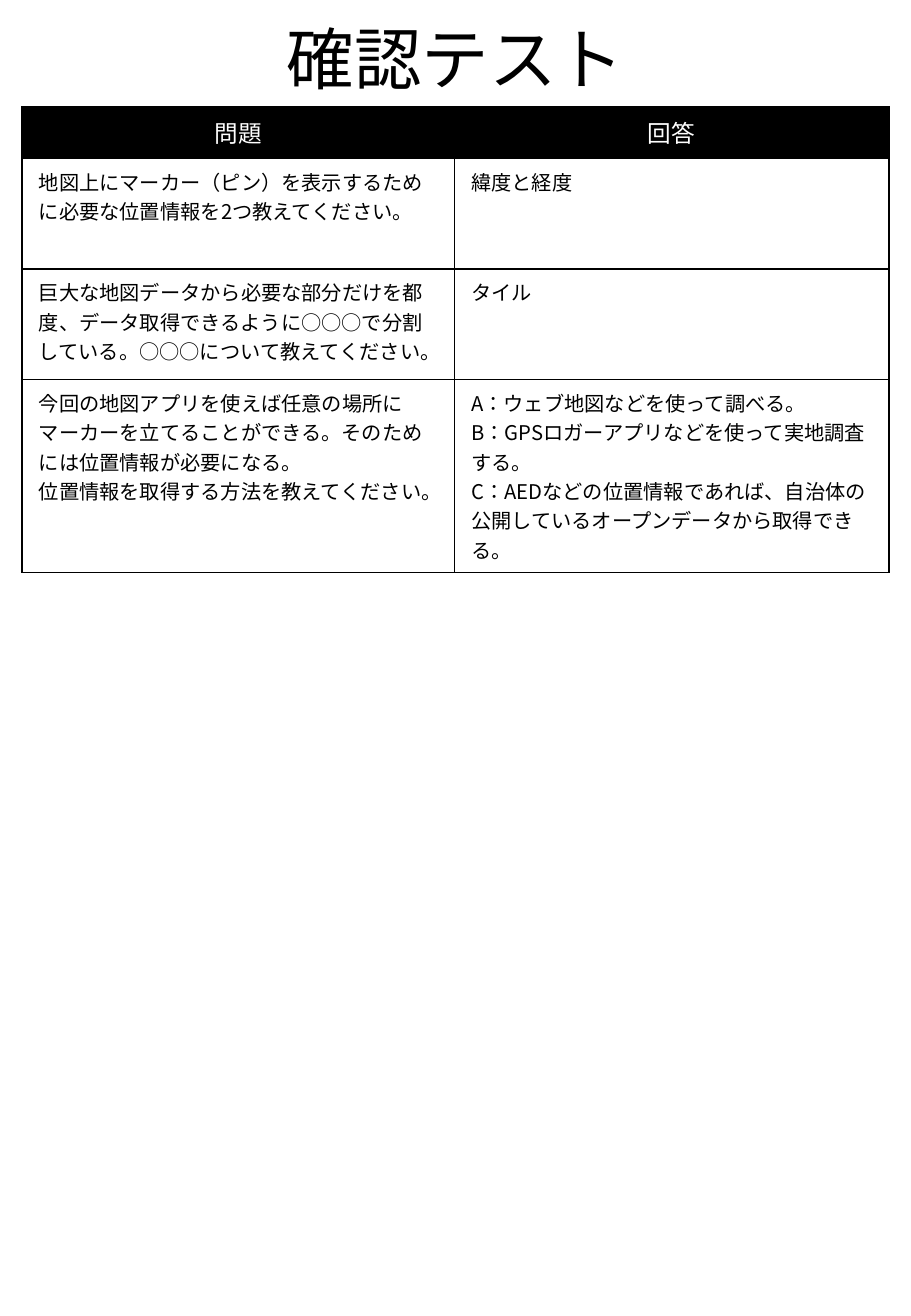
from lxml.etree import SubElement
from pptx import Presentation
from pptx.dml.color import RGBColor
from pptx.enum.lang import MSO_LANGUAGE_ID
from pptx.enum.text import MSO_ANCHOR, MSO_AUTO_SIZE, PP_ALIGN
from pptx.oxml.ns import qn
from pptx.util import Inches, Pt

FONT = "Noto Sans CJK JP"
COLORS = {"ink": "000000", "paper": "FFFFFF"}


def write(par, text, size, color):
    run = par.add_run()
    run.text = text
    font = run.font
    font.size = Pt(size)
    font.bold = False
    font.name = FONT
    font.language_id = MSO_LANGUAGE_ID.JAPANESE
    font.color.rgb = RGBColor.from_string(COLORS[color])
    SubElement(font._element, qn("a:ea"), typeface=FONT)


def border(cell):
    for side in ("lnL", "lnR", "lnT", "lnB"):
        line = SubElement(cell._tc.get_or_add_tcPr(), qn(f"a:{side}"), w=str(Pt(1)))
        fill = SubElement(line, qn("a:solidFill"))
        SubElement(fill, qn("a:srgbClr"), val=COLORS["ink"])


deck = Presentation()
deck.slide_width = Inches(7.5)
deck.slide_height = Inches(10.83)
slide = deck.slides.add_slide(deck.slide_layouts[0])
sub = slide.placeholders[1]
sub._element.getparent().remove(sub._element)

title = slide.shapes.title
title.left, title.top = Inches(0.56), Inches(0.06)
title.width, title.height = Inches(6.38), Inches(0.81)
frame = title.text_frame
frame.auto_size = MSO_AUTO_SIZE.NONE
frame.vertical_anchor = MSO_ANCHOR.BOTTOM
head = frame.paragraphs[0]
head.alignment = PP_ALIGN.CENTER
head.line_spacing = 0.9
write(head, "確認テスト", 40, "ink")

rows = [
    (["問題"], ["回答"]),
    (["地図上にマーカー（ピン）を表示するために必要な位置情報を2つ教えてください。"],
     ["緯度と経度"]),
    (["巨大な地図データから必要な部分だけを都度、データ取得できるように○○○で分割している。"
      "○○○について教えてください。"],
     ["タイル"]),
    (["今回の地図アプリを使えば任意の場所にマーカーを立てることができる。"
      "そのためには位置情報が必要になる。",
      "位置情報を取得する方法を教えてください。"],
     ["A：ウェブ地図などを使って調べる。",
      "B：GPSロガーアプリなどを使って実地調査する。",
      "C：AEDなどの位置情報であれば、自治体の公開しているオープンデータから取得できる。"]),
]
widths = [3.56, 3.58]
heights = [0.4, 0.91, 0.91, 1.5]

table = slide.shapes.add_table(
    len(rows), len(widths), Inches(0.18), Inches(0.88),
    Inches(sum(widths)), Inches(sum(heights))).table
table.horz_banding = False
for col, width in zip(table.columns, widths):
    col.width = Inches(width)
for row, height in zip(table.rows, heights):
    row.height = Inches(height)

for r, row in enumerate(rows):
    size, ink, back = (12, "ink", "paper") if r else (14, "paper", "ink")
    for c, texts in enumerate(row):
        cell = table.cell(r, c)
        cell.margin_left = cell.margin_right = Inches(0.14)
        cell.margin_top = cell.margin_bottom = Inches(0.07)
        border(cell)
        cell.fill.solid()
        cell.fill.fore_color.rgb = RGBColor.from_string(COLORS[back])
        body = cell.text_frame
        for n, text in enumerate(texts):
            par = body.add_paragraph() if n else body.paragraphs[0]
            par.alignment = PP_ALIGN.LEFT if r else PP_ALIGN.CENTER
            write(par, text, size, ink)

deck.save("out.pptx")
